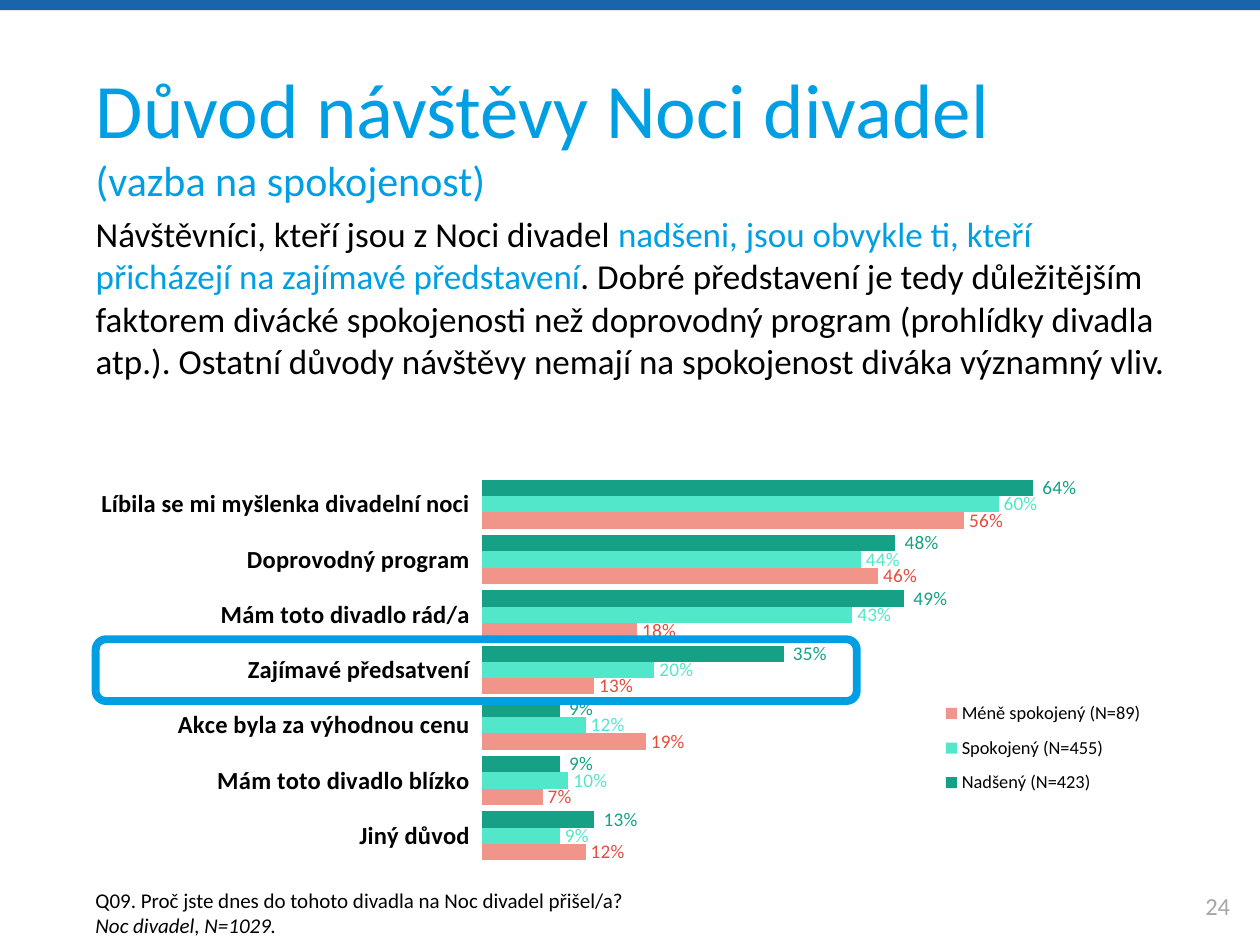
from dataclasses import dataclass

from lxml import etree
from pptx import Presentation
from pptx.chart.data import CategoryChartData
from pptx.dml.color import RGBColor
from pptx.enum.chart import XL_CHART_TYPE, XL_LABEL_POSITION, XL_LEGEND_POSITION, XL_TICK_MARK
from pptx.enum.shapes import MSO_SHAPE
from pptx.enum.text import MSO_ANCHOR, MSO_AUTO_SIZE, PP_ALIGN
from pptx.oxml.ns import qn
from pptx.util import Inches, Pt

BARS = XL_CHART_TYPE.BAR_CLUSTERED
OUTER = XL_LABEL_POSITION.OUTSIDE_END
RIGHT = XL_LEGEND_POSITION.RIGHT
TICK = XL_TICK_MARK.OUTSIDE
RECT, ROUND = MSO_SHAPE.RECTANGLE, MSO_SHAPE.ROUNDED_RECTANGLE
TOP, MID, BASE = MSO_ANCHOR.TOP, MSO_ANCHOR.MIDDLE, MSO_ANCHOR.BOTTOM
LEFT, CENTER = PP_ALIGN.LEFT, PP_ALIGN.CENTER


@dataclass(frozen=True)
class Theme:
    font: str = "Calibri"
    band: str = "1964AA"
    accent: str = "009FE3"
    ink: str = "000000"
    muted: str = "A6A6A6"
    title: float = 44
    sub: float = 24
    body: float = 20
    page: float = 14
    note: float = 12
    axis: float = 14
    label: float = 11
    legend: float = 10.5


T = Theme()
WIDE, HIGH = 10, 7.5
EDGE = 0.66
CHART = (EDGE, 3.3, 8.66, 3.69)
PLOT = (0.366, 0.131, 0.552, 0.832)     # shares of the chart
LEGEND = (0.78, 0.59, 0.2, 0.25)
MARKED = 3                              # row of the outlined reason

# Each run: text, size, colour, italic
TITLE = [[("Důvod návštěvy Noci divadel\v", T.title, T.accent, False),
          ("(vazba na spokojenost)", T.sub, T.accent, False)]]
BODY = [[
    ("Návštěvníci, kteří jsou z Noci divadel ", T.body, T.ink, False),
    ("nadšeni, jsou obvykle ti, kteří přicházejí na zajímavé představení",
     T.body, T.accent, False),
    (". Dobré představení je tedy důležitějším faktorem divácké spokojenosti "
     "než doprovodný program (prohlídky divadla atp.). Ostatní důvody návštěvy "
     "nemají na spokojenost diváka významný vliv.", T.body, T.ink, False),
]]
NOTE = [[("Q09. Proč jste dnes do tohoto divadla na Noc divadel přišel/a?",
          T.note, T.ink, False)],
        [("Noc divadel, N=1029.", T.note, T.ink, True)]]
PAGE = [[("24", T.page, T.muted, False)]]

REASONS = ["Líbila se mi myšlenka divadelní noci", "Doprovodný program",
           "Mám toto divadlo rád/a", "Zajímavé předsatvení",
           "Akce byla za výhodnou cenu", "Mám toto divadlo blízko", "Jiný důvod"]
# Name, values, bar colour, label colour, label format
SERIES = [
    ("Nadšený (N=423)", (0.64, 0.48, 0.49, 0.35, 0.09, 0.09, 0.13),
     "16A085", "16A085", r"[>0.015]\ 0%;;"),
    ("Spokojený (N=455)", (0.6, 0.44, 0.43, 0.2, 0.12, 0.1, 0.09),
     "52E7CA", "52E7CA", "0%"),
    ("Méně spokojený (N=89)", (0.56, 0.46, 0.18, 0.13, 0.19, 0.07, 0.12),
     "F1948A", "E74C3C", "0%"),
]


def style(font, size, color, bold=False):
    font.name, font.size, font.bold = T.font, Pt(size), bold
    font.color.rgb = RGBColor.from_string(color)


def put(shape, box):
    shape.left, shape.top, shape.width, shape.height = map(Inches, box)


def write(shape, paras, align=LEFT, anchor=TOP, wrap=True, inset=0.05):
    frame = shape.text_frame
    frame.word_wrap, frame.vertical_anchor = wrap, anchor
    frame.auto_size = MSO_AUTO_SIZE.NONE
    frame.margin_top = Inches(inset)
    for i, runs in enumerate(paras):
        para = frame.add_paragraph() if i else frame.paragraphs[0]
        para.alignment, para.space_before = align, Pt(0)
        for text, size, color, slant in runs:
            run = para.add_run()
            run.text = text.rstrip("\v")
            style(run.font, size, color)
            run.font.italic = slant
            if text.endswith("\v"):
                para.add_line_break()


def add_text(slide, box, paras, **how):
    write(slide.shapes.add_textbox(*map(Inches, box)), paras, **how)


def add_box(slide, kind, box):
    shape = slide.shapes.add_shape(kind, *map(Inches, box))
    shape.shadow.inherit = False
    return shape


def place(part, shares, inner=False):
    """Set a manual layout, in shares of the chart, on a plot area or legend."""
    for old in part.findall(qn("c:layout")):
        part.remove(old)
    layout = etree.Element(qn("c:layout"))
    manual = etree.SubElement(layout, qn("c:manualLayout"))
    rules = [("layoutTarget", "inner")] if inner else []
    rules += [("xMode", "edge"), ("yMode", "edge"), *zip("xywh", shares)]
    for tag, val in rules:
        etree.SubElement(manual, qn(f"c:{tag}")).set("val", str(val))
    part.insert(0 if inner else 1, layout)


def add_bars(slide):
    data = CategoryChartData(number_format="0%")
    data.categories = REASONS
    for name, vals, *_ in SERIES:
        data.add_series(name, vals)
    chart = slide.shapes.add_chart(BARS, *map(Inches, CHART), data).chart
    chart.has_title = False
    style(chart.font, T.legend, T.ink)

    plot = chart.plots[0]
    plot.gap_width, plot.overlap, plot.vary_by_categories = 40, 0, False
    for series, (_, _, fill, ink, fmt) in zip(plot.series, SERIES):
        series.format.fill.solid()
        series.format.fill.fore_color.rgb = RGBColor.from_string(fill)
        labels = series.data_labels
        labels.show_value, labels.position = True, OUTER
        labels.number_format, labels.number_format_is_linked = fmt, False
        style(labels.font, T.label, ink)

    cats, vals = chart.category_axis, chart.value_axis
    cats.reverse_order, cats.major_tick_mark = True, TICK
    cats.format.line.fill.background()
    style(cats.tick_labels.font, T.axis, T.ink, bold=True)
    vals.visible = vals.has_major_gridlines = False
    vals.minimum_scale, vals.maximum_scale = 0, 0.7

    chart.has_legend = True
    key = chart.legend
    key.position, key.include_in_layout = RIGHT, False
    style(key.font, T.legend, T.ink)
    area = chart.element.find(".//" + qn("c:plotArea"))
    place(area, PLOT, inner=True)
    place(chart.element.find(".//" + qn("c:legend")), LEGEND)


def add_mark(slide):
    """Outline the row of the marked reason."""
    row = CHART[3] * PLOT[3] / len(REASONS)
    mid = CHART[1] + CHART[3] * PLOT[1] + row * (MARKED + 0.5)
    tall = 0.49
    mark = add_box(slide, ROUND, (EDGE + 0.1, mid - tall / 2, 6.04, tall))
    mark.fill.background()
    mark.line.color.rgb = RGBColor.from_string(T.accent)
    mark.line.width = Pt(4.5)


def main():
    deck = Presentation()
    deck.slide_width, deck.slide_height = Inches(WIDE), Inches(HIGH)
    slide = deck.slides.add_slide(deck.slide_layouts[1])

    band = add_box(slide, RECT, (0, 0, WIDE, 0.08))
    band.fill.solid()
    band.fill.fore_color.rgb = RGBColor.from_string(T.band)
    band.line.fill.background()

    title, body = slide.placeholders
    put(title, (EDGE, 0.4, 8.66, 1.57))
    write(title, TITLE, inset=0.09)
    put(body, (EDGE, 1.64, 8.77, 1.45))
    props = body.text_frame.paragraphs[0]._p.get_or_add_pPr()
    props.set("marL", "0")
    props.set("indent", "0")
    etree.SubElement(props, qn("a:buNone"))
    write(body, BODY)

    add_bars(slide)
    add_mark(slide)
    foot = CHART[1] + CHART[3]
    add_text(slide, (EDGE, foot, 4.44, 0.5), NOTE, anchor=BASE, wrap=False)
    add_text(slide, (WIDE - 0.67, foot, 0.67, 0.4), PAGE, align=CENTER, anchor=MID)
    deck.save("out.pptx")


if __name__ == "__main__":
    main()
